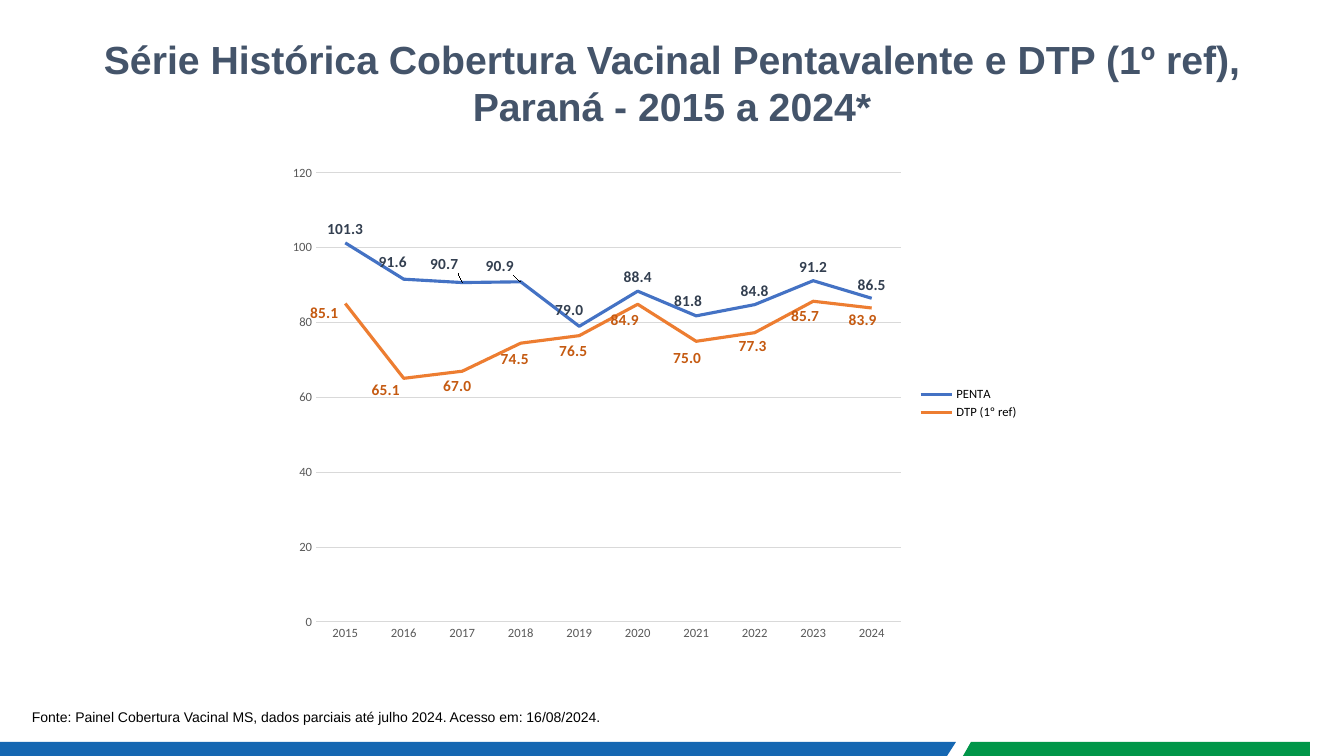
"""Build the slide on pentavalent and DTP vaccine coverage in Paraná, 2015 to 2024."""
from dataclasses import dataclass

from pptx import Presentation
from pptx import util as u
from pptx.chart.data import CategoryChartData
from pptx.dml.color import RGBColor
from pptx.enum import chart as ch
from pptx.enum import text
from pptx.oxml import parse_xml

PX = 914400 / 100.8
CHART_NS = "http://schemas.openxmlformats.org/drawingml/2006/chart"


@dataclass(frozen=True)
class Theme:
    heading: str = "44546A"
    ink: str = "000000"
    axis: str = "595959"
    grid: str = "D9D9D9"
    blue_band: str = "1567B2"
    green_band: str = "009649"
    penta: str = "4472C4"
    penta_label: str = "333F50"
    dtp: str = "ED7D31"
    dtp_label: str = "C55A11"
    heading_size: int = 28
    source_size: int = 10
    label_size: int = 11
    axis_size: int = 9
    text_font: str = "Arial"
    chart_font: str = "Calibri"


theme = Theme()


def px(*lengths):
    return [u.Emu(round(length * PX)) for length in lengths]


def add_text(words, box, size, color, bold=False, align=text.PP_ALIGN.LEFT, spacing=1.0):
    frame = slide.shapes.add_textbox(*px(*box)).text_frame
    frame.word_wrap = True
    paragraph = frame.paragraphs[0]
    paragraph.alignment = align
    paragraph.line_spacing = spacing
    run = paragraph.add_run()
    run.text = words
    run.font.name = theme.text_font
    run.font.size = u.Pt(size)
    run.font.bold = bold
    run.font.color.rgb = RGBColor.from_string(color)


deck = Presentation()
deck.slide_width, deck.slide_height = px(1344, 756)
slide = deck.slides.add_slide(deck.slide_layouts[6])

bands = [
    (theme.blue_band, [(0, 742), (956, 742), (947, 756), (0, 756)]),
    (theme.green_band, [(971, 742), (1310, 742), (1310, 756), (963, 756)]),
]
for color, corners in bands:
    outline = slide.shapes.build_freeform(*corners[0], scale=PX)
    outline.add_line_segments(corners[1:], close=True)
    band = outline.convert_to_shape()
    band.shadow.inherit = False
    band.fill.solid()
    band.fill.fore_color.rgb = RGBColor.from_string(color)
    band.line.fill.background()

add_text("Série Histórica Cobertura Vacinal Pentavalente e DTP (1º ref), Paraná - 2015 a 2024*",
         (67, 30, 1210, 126), theme.heading_size, theme.heading, bold=True,
         align=text.PP_ALIGN.CENTER)
add_text("Fonte: Painel Cobertura Vacinal MS, dados parciais até julho 2024. Acesso em: 16/08/2024.",
         (22, 705, 1007, 44), theme.source_size, theme.ink, spacing=0.9)

coverage = CategoryChartData(number_format="0.0")
coverage.categories = [str(year) for year in range(2015, 2025)]
coverage.add_series("PENTA", (101.3, 91.6, 90.7, 90.9, 79.0, 88.4, 81.8, 84.8, 91.2, 86.5))
coverage.add_series("DTP (1º ref)", (85.1, 65.1, 67.0, 74.5, 76.5, 84.9, 75.0, 77.3, 85.7, 83.9))
chart_left, chart_top, chart_width, chart_height = 278, 156, 751, 495
chart = slide.shapes.add_chart(
    ch.XL_CHART_TYPE.LINE, *px(chart_left, chart_top, chart_width, chart_height), coverage).chart
chart.has_title = False
chart.font.name = theme.chart_font
chart.font.size = u.Pt(10)
chart.font.color.rgb = RGBColor.from_string(theme.ink)

chart.has_legend = True
chart.legend.position = ch.XL_LEGEND_POSITION.RIGHT
chart.legend.include_in_layout = False
legend_font = chart.legend.font
legend_font.name = theme.chart_font
legend_font.size = u.Pt(theme.axis_size)
legend_font.color.rgb = RGBColor.from_string(theme.ink)

years, percent = chart.category_axis, chart.value_axis
for axis in (years, percent):
    axis.major_tick_mark = axis.minor_tick_mark = ch.XL_TICK_MARK.NONE
    axis.tick_labels.font.name = theme.chart_font
    axis.tick_labels.font.size = u.Pt(theme.axis_size)
    axis.tick_labels.font.color.rgb = RGBColor.from_string(theme.axis)
percent.minimum_scale, percent.maximum_scale, percent.major_unit = 0, 120, 20
percent.tick_labels.number_format = "0"
percent.tick_labels.number_format_is_linked = False
percent.format.line.fill.background()
for rule in (years.format.line, percent.major_gridlines.format.line):
    rule.color.rgb = RGBColor.from_string(theme.grid)
    rule.width = u.Pt(0.75)

plot_area = chart._chartSpace.xpath("c:chart/c:plotArea")[0]
for automatic in plot_area.xpath("c:layout"):
    plot_area.remove(automatic)
plot_area.insert(0, parse_xml(
    f'<c:layout xmlns:c="{CHART_NS}"><c:manualLayout><c:layoutTarget val="inner"/>'
    f'<c:xMode val="edge"/><c:yMode val="edge"/>'
    f'<c:x val="{(316 - chart_left) / chart_width:.4f}"/>'
    f'<c:y val="{(173 - chart_top) / chart_height:.4f}"/>'
    f'<c:w val="{585 / chart_width:.4f}"/><c:h val="{449 / chart_height:.4f}"/>'
    f'</c:manualLayout></c:layout>'))

label_shifts = {
    "PENTA": {1: (-11, -4), 2: (-18, -5), 3: (-21, -2), 4: (-10, -3), 6: (-8, -1)},
    "DTP (1º ref)": dict(enumerate([
        (-21, 23), (-18, 25), (-5, 28), (-6, 30), (-6, 29),
        (-13, 29), (-9, 30), (-2, 27), (-8, 28), (-9, 26)])),
}
line_colors = {"PENTA": (theme.penta, theme.penta_label),
               "DTP (1º ref)": (theme.dtp, theme.dtp_label)}
for series in chart.plots[0].series:
    line_color, label_color = line_colors[series.name]
    series.smooth = False
    series.marker.style = ch.XL_MARKER_STYLE.NONE
    series.format.line.color.rgb = RGBColor.from_string(line_color)
    series.format.line.width = u.Pt(2.25)
    labels = series.data_labels
    labels.show_value = True
    labels.number_format = "0.0"
    labels.number_format_is_linked = False
    shifts = label_shifts[series.name]
    moved = [series.points[index].data_label for index in shifts]
    for label in [labels, *moved]:
        label.position = ch.XL_LABEL_POSITION.ABOVE
        label.font.name = theme.chart_font
        label.font.size = u.Pt(theme.label_size)
        label.font.bold = True
        label.font.color.rgb = RGBColor.from_string(label_color)
    for index, (right, down) in shifts.items():
        position = series._element.xpath(f"c:dLbls/c:dLbl/c:idx[@val='{index}']")[0]
        position.addnext(parse_xml(
            f'<c:numFmt xmlns:c="{CHART_NS}" formatCode="0.0" sourceLinked="0"/>'))
        position.addnext(parse_xml(
            f'<c:layout xmlns:c="{CHART_NS}"><c:manualLayout>'
            f'<c:x val="{right / chart_width:.4f}"/><c:y val="{down / chart_height:.4f}"/>'
            f'</c:manualLayout></c:layout>'))

deck.save("out.pptx")
